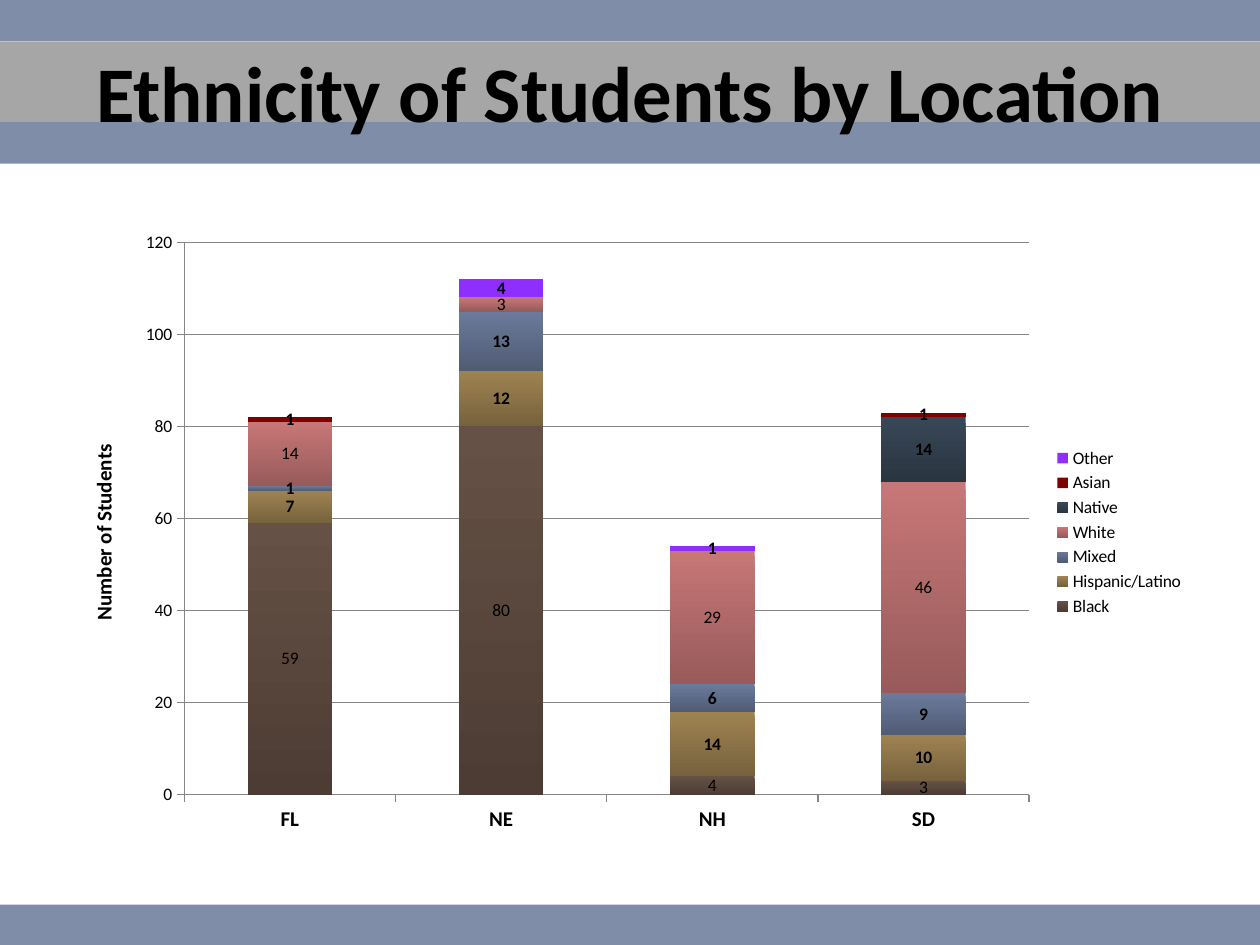
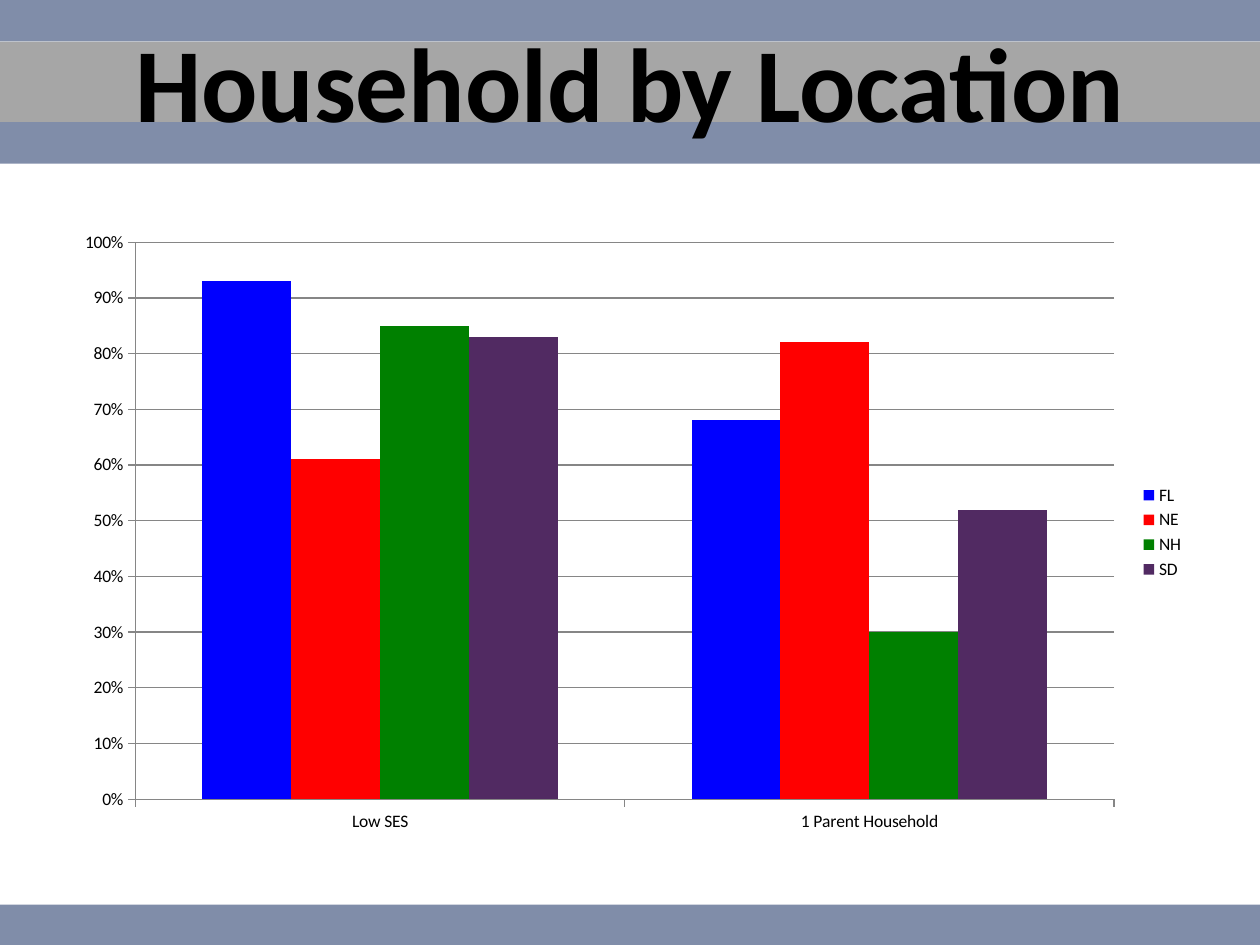
from lxml import etree
from pptx import Presentation
from pptx.chart.data import CategoryChartData
from pptx.dml.color import RGBColor
from pptx.enum import chart as charts, shapes, text
from pptx.oxml import ns
from pptx.util import Inches, Pt

FONT = "Calibri"
BLACK = RGBColor(0x00, 0x00, 0x00)
GREY = RGBColor(0xA6, 0xA6, 0xA6)
SLATE = RGBColor(0x80, 0x8D, 0xA9)
AXIS_GREY = RGBColor(0x86, 0x86, 0x86)

# Series colours: one colour is solid, two run from top to bottom
BROWN = (RGBColor(0x65, 0x51, 0x45), RGBColor(0x4D, 0x3C, 0x34))
TAN = (RGBColor(0x9E, 0x83, 0x51), RGBColor(0x77, 0x62, 0x3D))
STEEL = (RGBColor(0x6B, 0x7A, 0x9B), RGBColor(0x50, 0x5C, 0x74))
ROSE = (RGBColor(0xC7, 0x77, 0x77), RGBColor(0x98, 0x5A, 0x5A))
NAVY = (RGBColor(0x38, 0x47, 0x56), RGBColor(0x2A, 0x35, 0x41))
DARK_RED = (RGBColor(0x80, 0x00, 0x00),)
VIOLET = (RGBColor(0x8E, 0x2F, 0xFF),)
BLUE = (RGBColor(0x00, 0x00, 0xFF),)
RED = (RGBColor(0xFF, 0x00, 0x00),)
GREEN = (RGBColor(0x00, 0x80, 0x00),)
PURPLE = (RGBColor(0x51, 0x2A, 0x62),)

# Bands shared by all slides: top, height, colour
BANDS = [(0.33, 0.64, GREY), (0, 0.33, SLATE), (0.97, 0.33, SLATE), (7.18, 0.33, SLATE)]

# Series: name, values, colours, bold labels
ETHNICITIES = [
    ("Black", (59, 80, 4, 3), BROWN, False),
    ("Hispanic/Latino", (7, 12, 14, 10), TAN, True),
    ("Mixed", (1, 13, 6, 9), STEEL, True),
    ("White", (14, 3, 29, 46), ROSE, False),
    ("Native", (None, None, None, 14), NAVY, True),
    ("Asian", (1, None, None, 1), DARK_RED, True),
    ("Other", (None, 4, 1, None), VIOLET, True),
]
HOUSEHOLDS = [
    ("FL", (0.93, 0.68), BLUE, False),
    ("NE", (0.61, 0.82), RED, False),
    ("NH", (0.85, 0.3), GREEN, False),
    ("SD", (0.83, 0.52), PURPLE, False),
]


class Deck:
    def __init__(self):
        self.presentation = Presentation()
        self.presentation.slide_width = Inches(10)
        self.presentation.slide_height = Inches(7.5)
        self.layout = self.presentation.slide_layouts[5]
        self.slide = None

    def add_slide(self):
        self.slide = self.presentation.slides.add_slide(self.layout)

    def move_bands_to_layout(self):
        """Draw the bands once and let every slide inherit them."""
        tree = self.layout.shapes._spTree
        for index, (top, height, color) in enumerate(BANDS):
            band = self.slide.shapes.add_shape(
                shapes.MSO_SHAPE.RECTANGLE, 0, Inches(top), Inches(10), Inches(height))
            band.shadow.inherit = False
            band.fill.solid()
            band.fill.fore_color.rgb = color
            band.line.fill.background()
            band._element.nvSpPr.cNvPr.id = 20 + index
            tree.insert(2 + index, band._element)

    def title(self, words, top, size):
        title = self.slide.shapes.title
        title.left, title.top = Inches(0.5), Inches(top)
        title.width, title.height = Inches(9), Inches(0.68)
        frame = title.text_frame
        frame.text = words
        frame.auto_size = text.MSO_AUTO_SIZE.NONE
        frame.vertical_anchor = text.MSO_ANCHOR.MIDDLE
        paragraph = frame.paragraphs[0]
        paragraph.alignment = text.PP_ALIGN.CENTER
        self.style(paragraph.runs[0].font, size, True)

    def style(self, font, size, bold=False):
        font.name, font.size, font.bold = FONT, Pt(size), bold
        font.color.rgb = BLACK

    def chart(self, kind, categories, rows, plot_area, number_format="General"):
        data = CategoryChartData(number_format=number_format)
        data.categories = categories
        for name, values, _, _ in rows:
            data.add_series(name, values)
        chart = self.slide.shapes.add_chart(
            kind, Inches(0.5), Inches(1.75), Inches(9), Inches(4.95), data).chart
        self.style(chart.font, 10)
        chart.has_title = False
        chart.has_legend = True
        chart.legend.position = charts.XL_LEGEND_POSITION.RIGHT
        chart.legend.include_in_layout = False
        plot = chart.plots[0]
        plot.vary_by_categories = False
        plot.gap_width = 150
        for series, (_, _, colors, _) in zip(plot.series, rows):
            self.fill_series(series, colors)
        for axis in (chart.category_axis, chart.value_axis):
            axis.major_tick_mark = charts.XL_TICK_MARK.OUTSIDE
            axis.minor_tick_mark = charts.XL_TICK_MARK.NONE
            self.axis_line(axis.format.line)
        value_axis = chart.value_axis
        value_axis.minimum_scale = 0
        value_axis.has_major_gridlines = True
        self.axis_line(value_axis.major_gridlines.format.line)
        value_axis.tick_labels.number_format = number_format
        value_axis.tick_labels.number_format_is_linked = False
        self.place_plot(chart, plot_area)
        return chart

    def axis_line(self, line):
        line.color.rgb = AXIS_GREY
        line.width = Pt(0.75)

    def fill_series(self, series, colors):
        series.invert_if_negative = False
        fill = series.format.fill
        if len(colors) == 1:
            fill.solid()
            fill.fore_color.rgb = colors[0]
            return
        fill.gradient()
        fill.gradient_angle = 270
        for position, (stop, color) in enumerate(zip(fill.gradient_stops, colors)):
            stop.position = position
            stop.color.rgb = color

    def place_plot(self, chart, plot_area):
        """Fix the inner plot area, as fractions of the chart."""
        area = chart._chartSpace.chart.plotArea
        for old in area.findall(ns.qn("c:layout")):
            area.remove(old)
        layout = etree.Element(ns.qn("c:layout"))
        manual = etree.SubElement(layout, ns.qn("c:manualLayout"))
        settings = [("layoutTarget", "inner"), ("xMode", "edge"), ("yMode", "edge")]
        settings += zip("xywh", plot_area)
        for tag, value in settings:
            etree.SubElement(manual, ns.qn(f"c:{tag}")).set("val", str(value))
        area.insert(0, layout)

    def value_labels(self, chart, rows):
        for series, (_, _, _, bold) in zip(chart.plots[0].series, rows):
            labels = series.data_labels
            labels.show_value = True
            self.style(labels.font, 10, bold)

    def value_title(self, chart, words):
        frame = chart.value_axis.axis_title.text_frame
        frame.text = words
        self.style(frame.paragraphs[0].runs[0].font, 12, True)


def main():
    deck = Deck()

    # Ethnicity
    deck.add_slide()
    deck.move_bands_to_layout()
    deck.title("Ethnicity of Students by Location", 0.38, 45)
    chart = deck.chart(charts.XL_CHART_TYPE.COLUMN_STACKED, ("FL", "NE", "NH", "SD"),
                       ETHNICITIES, (0.107, 0.035, 0.745, 0.886))
    chart.plots[0].overlap = 100
    deck.style(chart.category_axis.tick_labels.font, 12, True)
    deck.value_title(chart, "Number of Students")
    deck.value_labels(chart, ETHNICITIES)

    # Household
    deck.add_slide()
    deck.title("Household by Location", 0.3, 60)
    chart = deck.chart(charts.XL_CHART_TYPE.COLUMN_CLUSTERED, ("Low SES", "1 Parent Household"),
                       HOUSEHOLDS, (0.064, 0.035, 0.863, 0.893), "0%")
    chart.value_axis.maximum_scale = 1
    chart.value_axis.major_unit = 0.1

    deck.presentation.save("out.pptx")


if __name__ == "__main__":
    main()
